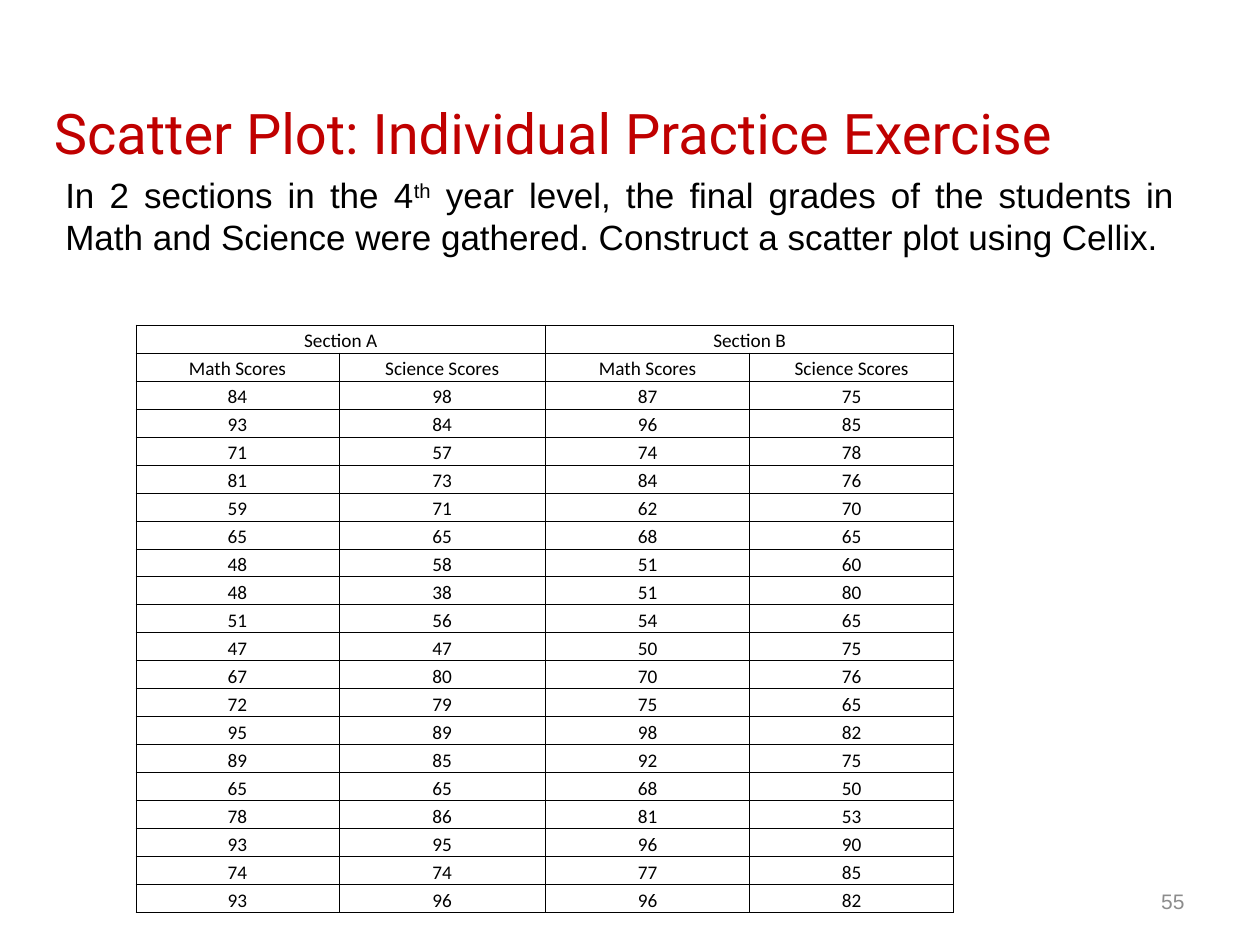
from lxml import etree
from pptx import Presentation
from pptx.dml.color import RGBColor
from pptx.enum.text import MSO_ANCHOR, PP_ALIGN
from pptx.oxml.ns import qn
from pptx.util import Inches, Pt

LEFT, MID, RIGHT, FULL = PP_ALIGN.LEFT, PP_ALIGN.CENTER, PP_ALIGN.RIGHT, PP_ALIGN.JUSTIFY
TOP, CENTER, BASE = MSO_ANCHOR.TOP, MSO_ANCHOR.MIDDLE, MSO_ANCHOR.BOTTOM
RED = RGBColor(0xC0, 0x00, 0x00)
BLACK = RGBColor(0x00, 0x00, 0x00)
GRAY = RGBColor(0x8C, 0x8C, 0x8C)

# Each text: runs of (words, raised), place, alignment, anchor, font
TEXTS = [
    ([("Scatter Plot: Individual Practice Exercise", False)],
     (0.33, 0.42, 9.67, 1.25), LEFT, CENTER,
     {"name": "Roboto", "size": Pt(32), "color": RED}),
    ([("In 2 sections in the 4", False), ("th", True),
      (" year level, the final grades of the students in Math and Science "
       "were gathered. Construct a scatter plot using Cellix.", False)],
     (0.42, 1.33, 9, 1.25), FULL, TOP,
     {"name": "Arial", "size": Pt(20), "color": BLACK}),
    ([("55", False)],
     (7.17, 6.95, 2.33, 0.4), RIGHT, CENTER,
     {"name": "Arial", "size": Pt(12), "color": GRAY}),
]

SECTIONS = ["Section A", "Section B"]
HEADS = ["Math Scores", "Science Scores"]
SCORES = [
    (84, 98, 87, 75), (93, 84, 96, 85), (71, 57, 74, 78), (81, 73, 84, 76),
    (59, 71, 62, 70), (65, 65, 68, 65), (48, 58, 51, 60), (48, 38, 51, 80),
    (51, 56, 54, 65), (47, 47, 50, 75), (67, 80, 70, 76), (72, 79, 75, 65),
    (95, 89, 98, 82), (89, 85, 92, 75), (65, 65, 68, 50), (78, 86, 81, 53),
    (93, 95, 96, 90), (74, 74, 77, 85), (93, 96, 96, 82),
]
GRID = (1.08, 2.58, 6.5, 4.67)
WIDTHS = [1.61, 1.64, 1.62, 1.62]
CELL_FONT = {"name": "Calibri", "size": Pt(11), "color": BLACK}
CELL_BOX = {"margin_left": 0, "margin_right": 0, "margin_top": 0,
            "margin_bottom": 0, "vertical_anchor": BASE}


def style(font, look):
    for key, value in look.items():
        if key == "color":
            font.color.rgb = value
        else:
            setattr(font, key, value)


def add_text(slide, runs, place, align, anchor, look):
    frame = slide.shapes.add_textbox(*map(Inches, place)).text_frame
    frame.word_wrap = True
    frame.vertical_anchor = anchor
    para = frame.paragraphs[0]
    para.alignment = align
    for words, raised in runs:
        run = para.add_run()
        run.text = words
        style(run.font, look)
        if raised:
            run._r.get_or_add_rPr().set("baseline", "30000")


def add_edges(cell):
    """Draw a thin black line on all four sides; lines precede the fill."""
    props = cell._tc.get_or_add_tcPr()
    for spot, side in enumerate(("a:lnL", "a:lnR", "a:lnT", "a:lnB")):
        line = etree.Element(qn(side), w=str(Pt(0.5)))
        fill = etree.SubElement(line, qn("a:solidFill"))
        etree.SubElement(fill, qn("a:srgbClr"), val=str(BLACK))
        props.insert(spot, line)


def fill_cell(cell, words):
    for key, value in CELL_BOX.items():
        setattr(cell, key, value)
    cell.fill.background()
    add_edges(cell)
    if words:
        para = cell.text_frame.paragraphs[0]
        para.alignment = MID
        run = para.add_run()
        run.text = words
        style(run.font, CELL_FONT)


def add_scores(slide):
    span = len(HEADS)
    top = [name if n == 0 else "" for name in SECTIONS for n in range(span)]
    rows = [top, HEADS * len(SECTIONS)] + [[str(n) for n in row] for row in SCORES]
    table = slide.shapes.add_table(len(rows), len(WIDTHS), *map(Inches, GRID)).table
    table.first_row = table.horz_banding = False
    for col, width in zip(table.columns, WIDTHS):
        col.width = Inches(width)
    for row, words in zip(table.rows, rows):
        row.height = Inches(GRID[3] / len(rows))
        for cell, word in zip(row.cells, words):
            fill_cell(cell, word)
    for col in range(0, len(WIDTHS), span):
        table.cell(0, col).merge(table.cell(0, col + span - 1))


def main():
    deck = Presentation()
    deck.slide_width, deck.slide_height = Inches(10), Inches(7.5)
    slide = deck.slides.add_slide(deck.slide_layouts[6])
    for text in TEXTS:
        add_text(slide, *text)
    add_scores(slide)
    deck.save("out.pptx")


if __name__ == "__main__":
    main()
